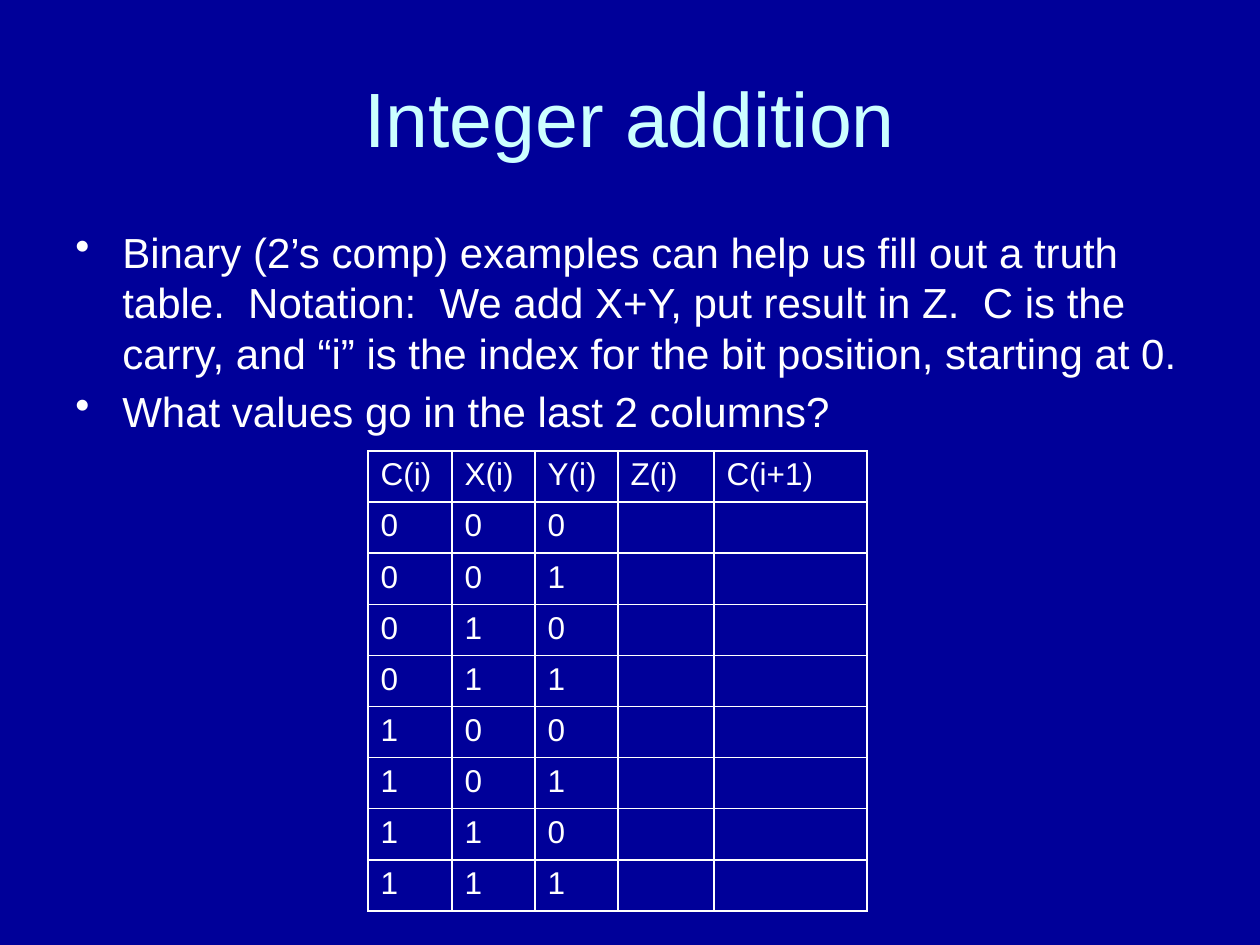
from itertools import product

from lxml.etree import SubElement
from pptx import Presentation
from pptx.dml.color import RGBColor
from pptx.enum.text import MSO_ANCHOR, PP_ALIGN
from pptx.oxml.ns import qn
from pptx.util import Pt

EMU_PER_PX = 914400 / 126

THEME = {
    "background": RGBColor.from_string("000099"),
    "rule": "FFFFFF",
    "rule_width": Pt(1),
    "title": {"name": "Arial", "size": Pt(44), "color": "CCFFFF"},
    "body": {"name": "Arial", "size": Pt(24), "color": "FFFFFF"},
    "table": {"name": "Arial", "size": Pt(18), "color": "FFFFFF"},
}

TITLE = "Integer addition"
POINTS = [
    "Binary (2’s comp) examples can help us fill out a truth table.  "
    "Notation:  We add X+Y, put result in Z.  C is the carry, and “i” is "
    "the index for the bit position, starting at 0.",
    "What values go in the last 2 columns?",
]
HEADINGS = ["C(i)", "X(i)", "Y(i)", "Z(i)", "C(i+1)"]
COLUMN_WIDTHS = [84, 83, 83, 96, 153]


def px(length):
    return round(length * EMU_PER_PX)


def style_font(font, style):
    for key, value in style.items():
        if key == "color":
            font.color.rgb = RGBColor.from_string(value)
        else:
            setattr(font, key, value)


def add_text(paragraph, text, style):
    run = paragraph.add_run()
    run.text = text
    style_font(run.font, style)


def add_frame(slide, box):
    frame = slide.shapes.add_textbox(*map(px, box)).text_frame
    frame.word_wrap = True
    return frame


def add_title(slide, box):
    frame = add_frame(slide, box)
    frame.vertical_anchor = MSO_ANCHOR.MIDDLE
    heading = frame.paragraphs[0]
    heading.alignment = PP_ALIGN.CENTER
    add_text(heading, TITLE, THEME["title"])


def add_points(slide, box):
    frame = add_frame(slide, box)
    indent = px(47)
    for index, text in enumerate(POINTS):
        point = frame.add_paragraph() if index else frame.paragraphs[0]
        add_text(point, text, THEME["body"])
        # Hanging bullet, with space before relative to the type size
        properties = point._p.get_or_add_pPr()
        for key, value in {"marL": indent, "indent": -indent}.items():
            properties.set(key, str(value))
        space = SubElement(properties, qn("a:spcBef"))
        SubElement(space, qn("a:spcPct"), val="20000")
        SubElement(properties, qn("a:buChar"), char="•")


def add_borders(cell):
    properties = cell._tc.get_or_add_tcPr()
    for side in ("lnL", "lnR", "lnT", "lnB"):
        line = SubElement(properties, qn(f"a:{side}"), w=str(THEME["rule_width"]))
        fill = SubElement(line, qn("a:solidFill"))
        SubElement(fill, qn("a:srgbClr"), val=THEME["rule"])


def add_truth_table(slide, box):
    # Every input combination, with the outputs left open
    rows = [HEADINGS] + [[*bits, "", ""] for bits in product("01", repeat=3)]
    table = slide.shapes.add_table(len(rows), len(HEADINGS), *map(px, box)).table
    for flag in ("first_row", "horz_banding"):
        setattr(table, flag, False)
    for column, width in zip(table.columns, COLUMN_WIDTHS):
        column.width = px(width)
    for r, values in enumerate(rows):
        for c, value in enumerate(values):
            cell = table.cell(r, c)
            add_borders(cell)
            cell.fill.background()
            paragraph = cell.text_frame.paragraphs[0]
            if value:
                add_text(paragraph, value, THEME["table"])
            else:
                style_font(paragraph.font, THEME["table"])


def main():
    deck = Presentation()
    deck.slide_width, deck.slide_height = px(1260), px(945)
    slide = deck.slides.add_slide(deck.slide_layouts[6])
    background = slide.background.fill
    background.solid()
    background.fore_color.rgb = THEME["background"]

    add_title(slide, (63, 38, 1134, 157))
    add_points(slide, (63, 220, 1134, 624))
    add_truth_table(slide, (368, 451, sum(COLUMN_WIDTHS), 460))
    deck.save("out.pptx")


if __name__ == "__main__":
    main()
